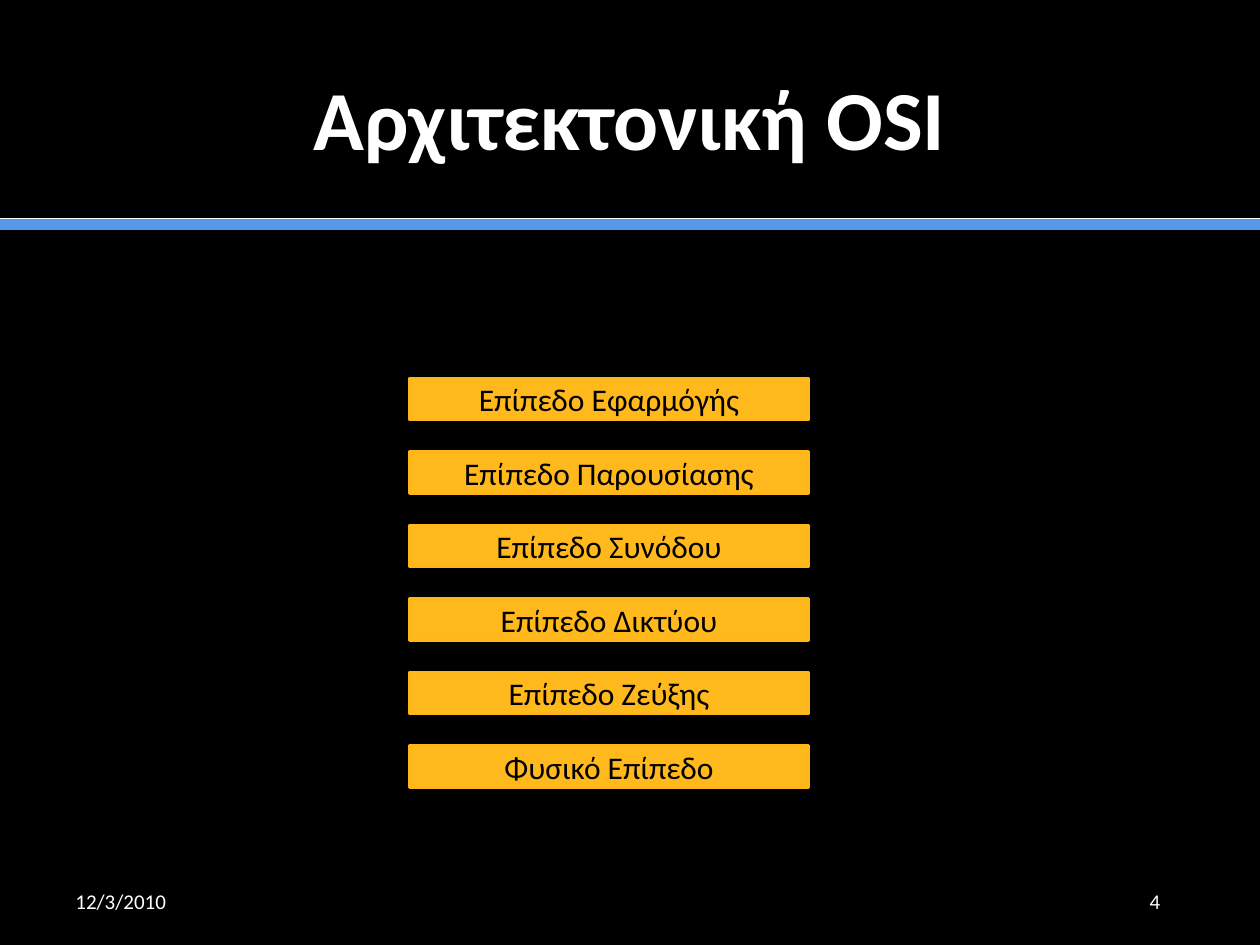
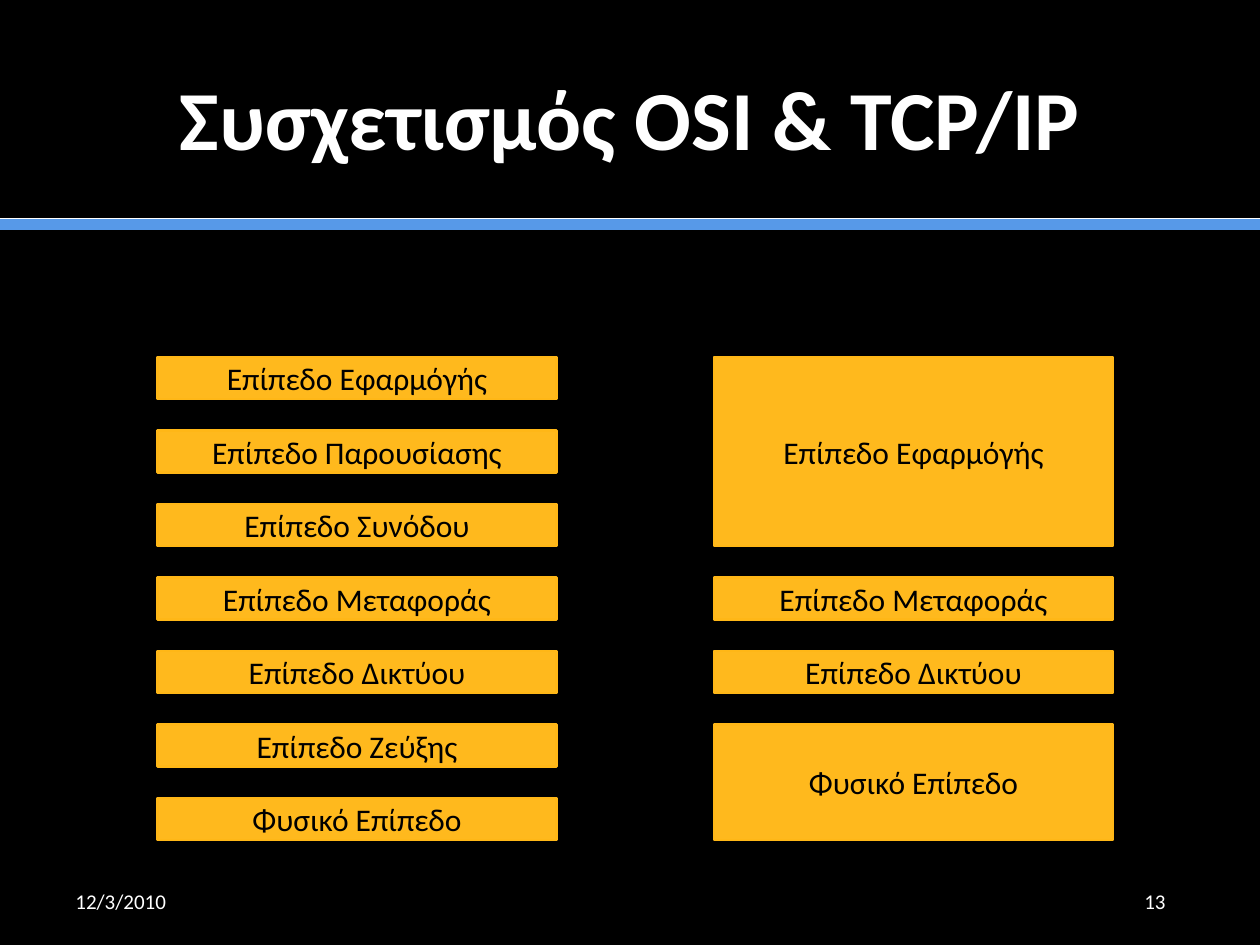
from pptx import Presentation
from pptx.util import Pt
from pptx.dml.color import RGBColor
from pptx.enum.shapes import MSO_SHAPE as Shape, MSO_CONNECTOR as Conn
from pptx.enum.text import PP_ALIGN as Align, MSO_ANCHOR as Anchor
from pptx.oxml.ns import qn
from lxml.etree import SubElement

WHITE, BLACK = "FFFFFF", "000000"
GOLD, EDGE, BLUE = "FFB91D", "FFB717", "5799E8"
WIDE, HIGH, STEP = 228, 24, 42  # layer width, height and pitch


def paint(color, tone):
    color.rgb = RGBColor.from_string(tone)


def write(box, text, size, tone, align=Align.CENTER, bold=False):
    frame = box.text_frame
    frame.word_wrap = True
    frame.vertical_anchor = Anchor.MIDDLE
    frame.text = text
    para = frame.paragraphs[0]
    para.alignment = align
    font = para.runs[0].font
    font.name, font.size, font.bold = "Calibri", Pt(size), bold
    paint(font.color, tone)


# Layer names
APP, PRES, SESS = "Επίπεδο Εφαρμόγής", "Επίπεδο Παρουσίασης", "Επίπεδο Συνόδου"
TRANS, NET = "Επίπεδο Μεταφοράς", "Επίπεδο Δικτύου"
LINK, PHYS = "Επίπεδο Ζεύξης", "Φυσικό Επίπεδο"

# Each slide: title, number, top of stacks, stacks of (left, [(layer, rows)])
SLIDES = [
    ("Αρχιτεκτονική OSI", "4", 216, [
        (234, [(name, 1) for name in (APP, PRES, SESS, NET, LINK, PHYS)]),
    ]),
    ("Συσχετισμός OSI & TCP/IP", "13", 204, [
        (90, [(name, 1) for name in (APP, PRES, SESS, TRANS, NET, LINK, PHYS)]),
        (408, [(APP, 3), (TRANS, 1), (NET, 1), (PHYS, 2)]),
    ]),
]

prs = Presentation()
prs.slide_width, prs.slide_height = Pt(720), Pt(540)
back = prs.slide_master.background.fill
back.solid()
paint(back.fore_color, BLACK)

for title, number, top, stacks in SLIDES:
    slide = prs.slides.add_slide(prs.slide_layouts[6])
    shapes = slide.shapes

    # Double rule under the title
    for y, tone, weight in ((128, BLUE, 7), (124.75, WHITE, 0.5)):
        rule = shapes.add_connector(Conn.STRAIGHT, 0, Pt(y), Pt(720), Pt(y))
        paint(rule.line.color, tone)
        rule.line.width = Pt(weight)
        SubElement(rule._element.spPr, qn("a:effectLst"))

    # Title
    head = shapes.add_textbox(Pt(36), Pt(21.6), Pt(648), Pt(90))
    write(head, title, 48, WHITE, bold=True)

    # Layer stacks
    for left, layers in stacks:
        row = 0
        for name, span in layers:
            tall = HIGH + (span - 1) * STEP
            layer = shapes.add_shape(Shape.RECTANGLE, Pt(left),
                                     Pt(top + row * STEP), Pt(WIDE), Pt(tall))
            layer.shadow.inherit = False
            layer.fill.solid()
            paint(layer.fill.fore_color, GOLD)
            paint(layer.line.color, EDGE)
            layer.line.width = Pt(1.5)
            write(layer, name, 18, BLACK)
            row += span

    # Footer: date and slide number
    for left, width, text, align in ((36, 168, "12/3/2010", Align.LEFT),
                                     (636, 48, number, Align.CENTER)):
        foot = shapes.add_textbox(Pt(left), Pt(500.5), Pt(width), Pt(28.75))
        write(foot, text, 12, WHITE, align)

prs.save("out.pptx")
